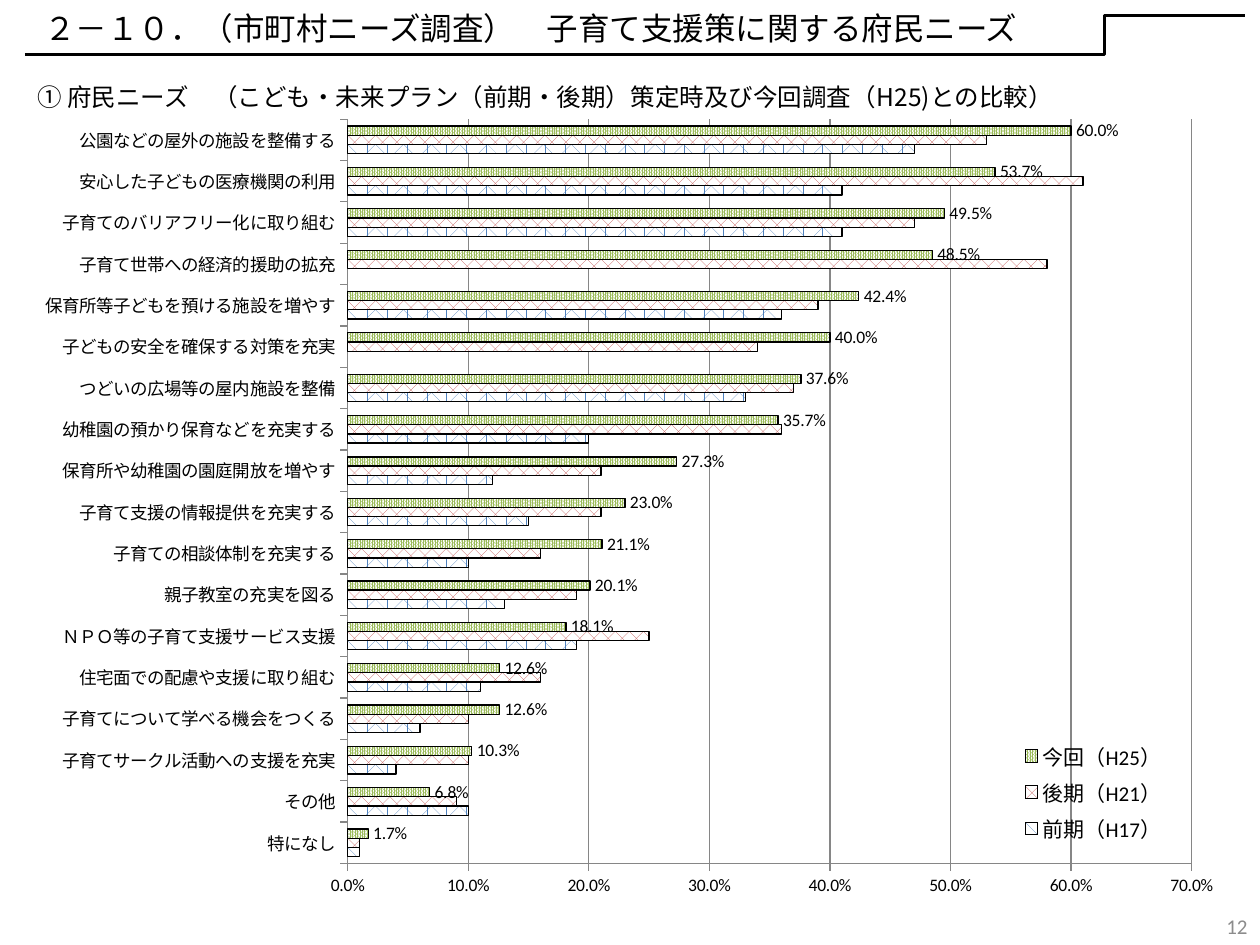
from lxml.etree import SubElement as Sub
from pptx import Presentation
from pptx.chart.data import CategoryChartData as Data
from pptx.dml.color import RGBColor as RGB
from pptx.enum.chart import XL_CHART_TYPE as Kind, XL_LABEL_POSITION as Pos
from pptx.enum.chart import XL_LEGEND_POSITION as Side, XL_TICK_MARK as Tick
from pptx.enum.dml import MSO_PATTERN as Pat
from pptx.enum.shapes import MSO_CONNECTOR as Link
from pptx.enum.text import MSO_ANCHOR as Anchor, MSO_AUTO_SIZE as Auto, PP_ALIGN as Align
from pptx.oxml import parse_xml
from pptx.oxml.ns import nsdecls, qn
from pptx.util import Cm, Pt

SANS, LATIN = "Noto Sans CJK JP", "Calibri"
TITLE = "　２－１０．（市町村ニーズ調査）　子育て支援策に関する府民ニーズ"
LEAD = "① 府民ニーズ　（こども・未来プラン（前期・後期）策定時及び今回調査（H25)との比較）"
NEEDS = [
    ("特になし", 0.01, 0.01, 0.017),
    ("その他", 0.1, 0.09, 0.068),
    ("子育てサークル活動への支援を充実", 0.04, 0.1, 0.103),
    ("子育てについて学べる機会をつくる", 0.06, 0.1, 0.126),
    ("住宅面での配慮や支援に取り組む", 0.11, 0.16, 0.126),
    ("ＮＰＯ等の子育て支援サービス支援", 0.19, 0.25, 0.181),
    ("親子教室の充実を図る", 0.13, 0.19, 0.201),
    ("子育ての相談体制を充実する", 0.1, 0.16, 0.211),
    ("子育て支援の情報提供を充実する", 0.15, 0.21, 0.23),
    ("保育所や幼稚園の園庭開放を増やす", 0.12, 0.21, 0.273),
    ("幼稚園の預かり保育などを充実する", 0.2, 0.36, 0.357),
    ("つどいの広場等の屋内施設を整備", 0.33, 0.37, 0.376),
    ("子どもの安全を確保する対策を充実", None, 0.34, 0.4),
    ("保育所等子どもを預ける施設を増やす", 0.36, 0.39, 0.424),
    ("子育て世帯への経済的援助の拡充", None, 0.58, 0.485),
    ("子育てのバリアフリー化に取り組む", 0.41, 0.47, 0.495),
    ("安心した子どもの医療機関の利用", 0.41, 0.61, 0.537),
    ("公園などの屋外の施設を整備する", 0.47, 0.53, 0.6),
]
WAVES = [
    ("前期（H17）", Pat.DIVOT, "4F81BD"),
    ("後期（H21）", Pat.PERCENT_25, "C0504D"),
    ("今回（H25）", Pat.PERCENT_90, "9BBB59"),
]


def paint(color, code):
    color.rgb = RGB.from_string(code)


def style(font, size, name=LATIN, code="000000"):
    font.size, font.name = Pt(size), name
    paint(font.color, code)


def write(shape, text, size, name, code="000000", align=Align.LEFT, anchor=Anchor.TOP):
    frame = shape.text_frame
    frame.text, frame.word_wrap, frame.auto_size = text, True, Auto.NONE
    frame.vertical_anchor = anchor
    para = frame.paragraphs[0]
    para.alignment = align
    style(para.font, size, name, code)


def place(x, y, w, h):
    parts = zip(("x", "y", "w", "h"), (x, y, w, h))
    modes = '<c:xMode val="edge"/><c:yMode val="edge"/>'
    sizes = "".join(f'<c:{key} val="{val}"/>' for key, val in parts)
    return f"<c:manualLayout>{{}}{modes}{sizes}</c:manualLayout>"


def layout(body, inner=""):
    return parse_xml(f"<c:layout {nsdecls('c')}>{body.format(inner)}</c:layout>")


def add_head(slide):
    title = slide.shapes.title
    title.left, title.top, title.width, title.height = Cm(0), Cm(0), Cm(25.4), Cm(1.12)
    write(title, TITLE, 18, SANS, anchor=Anchor.MIDDLE)
    rule = slide.shapes.add_connector(Link.ELBOW, Cm(0.5), Cm(1.1), Cm(25.1), Cm(0.32))
    rule.line.width = Pt(1.5)
    paint(rule.line.color, "000000")
    props = rule.element.spPr
    Sub(props, qn("a:effectLst"))
    bend = props.find(qn("a:prstGeom")).find(qn("a:avLst"))
    Sub(bend, qn("a:gd"), name="adj1", fmla="val 88500")
    lead = slide.shapes.add_textbox(Cm(0.5), Cm(1.52), Cm(24.6), Cm(0.86))
    write(lead, LEAD, 14, SANS)
    page = slide.shapes.add_textbox(Cm(19.48), Cm(18.03), Cm(5.92), Cm(1.02))
    write(page, "12", 12, LATIN, "8C8C8C", Align.RIGHT, Anchor.BOTTOM)


def add_bars(slide):
    names, *cols = zip(*NEEDS)
    data = Data(number_format="0.0%")
    data.categories = names
    for (name, _, _), vals in zip(WAVES, cols):
        data.add_series(name, vals)
    chart = slide.shapes.add_chart(
        Kind.BAR_CLUSTERED, Cm(0.74), Cm(2.39), Cm(23.93), Cm(16.36), data).chart
    chart.has_title = False
    style(chart.font, 10)
    plot = chart.plots[0]
    plot.gap_width, plot.overlap, plot.vary_by_categories = 150, 0, False
    for bars, (_, pat, code) in zip(plot.series, WAVES):
        fill = bars.format.fill
        fill.patterned()
        fill.pattern = pat
        paint(fill.fore_color, code)
        paint(fill.back_color, "FFFFFF")
        bars.format.line.width = Pt(0.75)
        paint(bars.format.line.color, "000000")
    tags = bars.data_labels
    tags.show_value, tags.position = True, Pos.OUTSIDE_END
    tags.number_format, tags.number_format_is_linked = "0.0%", False
    style(tags.font, 10)
    cat, val = chart.category_axis, chart.value_axis
    val.minimum_scale, val.maximum_scale, val.major_unit = 0, 0.7, 0.1
    val.has_major_gridlines = True
    val.tick_labels.number_format = "0.0%"
    val.tick_labels.number_format_is_linked = False
    for axis in (cat, val):
        axis.major_tick_mark, axis.minor_tick_mark = Tick.OUTSIDE, Tick.NONE
        style(axis.tick_labels.font, 10)
    for part in (cat, val, val.major_gridlines):
        part.format.line.width = Pt(0.75)
        paint(part.format.line.color, "868686")
    chart.has_legend = True
    key = chart.legend
    key.position, key.include_in_layout = Side.RIGHT, False
    style(key.font, 12)
    area = chart.element.xpath(".//c:plotArea")[0]
    for old in chart.element.xpath(".//c:plotArea/c:layout | .//c:legend/c:layout"):
        old.getparent().remove(old)
    area.insert(0, layout(place(0.262, 0, 0.711, 0.918), '<c:layoutTarget val="inner"/>'))
    spot = chart.element.xpath(".//c:legend/c:legendPos")[0]
    spot.addnext(layout(place(0.82, 0.76, 0.14, 0.14)))


def main():
    deck = Presentation()
    deck.slide_width, deck.slide_height = Cm(25.4), Cm(19.05)
    slide = deck.slides.add_slide(deck.slide_layouts[5])
    add_head(slide)
    add_bars(slide)
    deck.save("out.pptx")


if __name__ == "__main__":
    main()
